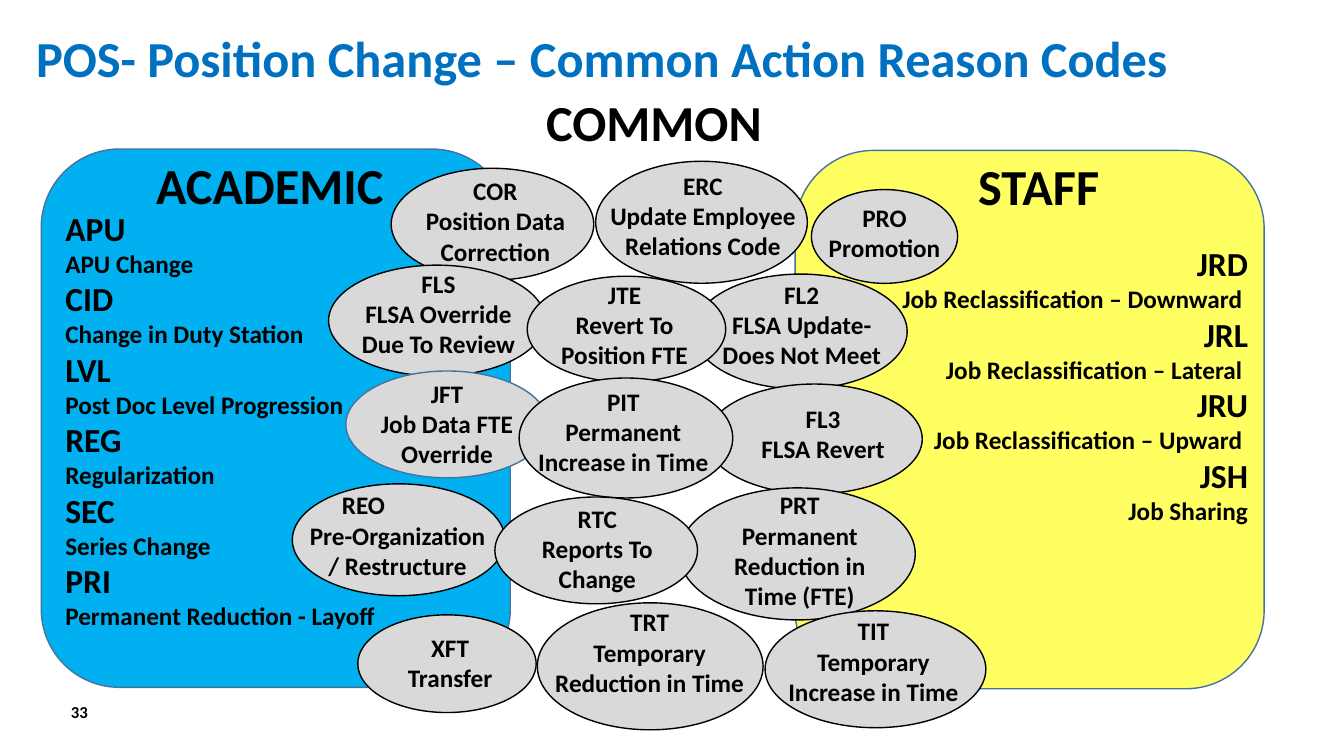
from pptx import Presentation
from pptx.dml.color import RGBColor
from pptx.enum.shapes import MSO_SHAPE
from pptx.enum.text import MSO_ANCHOR, MSO_AUTO_SIZE, PP_ALIGN
from pptx.oxml.ns import qn
from pptx.util import Pt
from lxml import etree

LEFT, CENTER, RIGHT = PP_ALIGN.LEFT, PP_ALIGN.CENTER, PP_ALIGN.RIGHT
BLACK, STEEL, GRAY = "000000", "43739E", "D9D9D9"

deck = Presentation()
deck.slide_width, deck.slide_height = Pt(960), Pt(540)
slide = deck.slides.add_slide(deck.slide_layouts[6])


def add_outline(kind, box, fill, line):
    outline = slide.shapes.add_shape(kind, *map(Pt, box))
    outline.shadow.inherit = False
    outline.fill.solid()
    outline.fill.fore_color.rgb = RGBColor.from_string(fill)
    outline.line.color.rgb = RGBColor.from_string(line)
    outline.line.width = Pt(1)
    return outline


def add_text(box, lines, align=LEFT, color=BLACK):
    label = slide.shapes.add_textbox(*map(Pt, box))
    frame = label.text_frame
    frame.word_wrap = True
    frame.auto_size = MSO_AUTO_SIZE.SHAPE_TO_FIT_TEXT
    for index, (text, size) in enumerate(lines):
        paragraph = frame.add_paragraph() if index else frame.paragraphs[0]
        paragraph.alignment = align
        run = paragraph.add_run()
        run.text = text
        run.font.name = "Calibri"
        run.font.size = Pt(size)
        run.font.bold = True
        run.font.color.rgb = RGBColor.from_string(color)
    return frame


staff_panel = add_outline(MSO_SHAPE.ROUNDED_RECTANGLE, (568, 107.5, 335, 384.5), "FFFF00", STEEL)
yellow = staff_panel.fill._xPr.find(qn("a:solidFill"))[0]
etree.SubElement(yellow, qn("a:alpha")).set("val", "62000")
add_outline(MSO_SHAPE.ROUNDED_RECTANGLE, (29.5, 106.5, 335, 384.5), "00B0F0", STEEL)

add_text((18.7, 15.8, 911, 51), [("POS- Position Change – Common Action Reason Codes", 36)], color="0070C0")
add_text((661.7, 107.3, 160.6, 51), [("STAFF", 36)], CENTER)
add_text((104.4, 106.6, 185, 51), [("ACADEMIC", 36)])
add_text((383, 61.2, 185, 51), [("COMMON", 36)])

academic_codes = [
    ("APU", "APU Change"),
    ("CID", "Change in Duty Station"),
    ("LVL", "Post Doc Level Progression"),
    ("REG", "Regularization"),
    ("SEC", "Series Change"),
    ("PRI", "Permanent Reduction - Layoff"),
]
staff_codes = [
    ("JRD", "Job Reclassification – Downward "),
    ("JRL", "Job Reclassification – Lateral "),
    ("JRU", "Job Reclassification – Upward "),
    ("JSH", "Job Sharing"),
]
for box, codes, align in [
    ((39.6, 144.7, 333.4, 337), academic_codes, LEFT),
    ((564.5, 170, 334, 288.7), staff_codes, RIGHT),
]:
    add_text(box, [line for code, meaning in codes for line in ((code, 24), (meaning, 18))], align)

common_codes = [
    ("COR", "Position Data Correction", (279.4, 120.2, 144.7, 79.9), (293.8, 121.7, 120.2, 75.6)),
    ("ERC", "Update Employee Relations Code", (425.5, 115.2, 151.2, 87.1), (416.9, 118.1, 170.6, 72.7)),
    ("FL2", "FLSA Update- Does Not Meet", (495.4, 195.8, 152.6, 82.1), (501.8, 195.8, 141.8, 72.7)),
    ("FLS", "FLSA Override Due To Review", (234.7, 189.4, 154.8, 79.2), (241.9, 187.9, 142.6, 73.4)),
    ("JTE", "Revert To Position FTE", (376.6, 197.3, 141.8, 75.6), (376.6, 195.8, 139, 72)),
    ("FL3", "FLSA Revert", (504.7, 274.3, 154.1, 78.5), (517, 284.4, 141.8, 51.1)),
    ("JFT", "Job Data FTE Override", (247, 265, 144.7, 76.3), (248.4, 266.4, 141.8, 72.7)),
    ("PIT", "Permanent Increase in Time", (370.8, 270, 152.6, 85.7), (374.4, 272.2, 141.8, 72.7)),
    ("PRO", "Promotion", (579.6, 135.4, 104.4, 67), (560.9, 141.1, 141.8, 51.1)),
    ("PRT", "Permanent Reduction in Time (FTE)", (485.3, 348.5, 168.5, 94.3), (500.4, 346.3, 141.8, 94.3)),
    ("REO", "Pre-Organization / Restructure", (208.8, 345.6, 151.9, 79.9), (213.1, 346.3, 141.8, 72.7)),
    ("RTC", "Reports To Change", (353.5, 355, 144.7, 76.3), (365.8, 355.7, 121.7, 72.7)),
    ("TIT", "Temporary Increase in Time", (546.5, 436.3, 157.7, 83.5), (553, 436.3, 141.8, 72.7)),
    ("TRT", "Temporary Reduction in Time", (383.8, 430.6, 161.3, 90.7), (388.8, 429.8, 150.5, 72.7)),
    ("XFT", "Transfer", (255.6, 439.2, 127.4, 69.8), (250.6, 447.8, 141.8, 51.1)),
]
for code, meaning, oval, box in common_codes:
    add_outline(MSO_SHAPE.OVAL, oval, GRAY, STEEL if code == "JFT" else BLACK)
    wording = add_text(box, [(code, 18), (meaning, 18)], CENTER)
    if code == "REO":
        heading = wording.paragraphs[0]
        heading.alignment = LEFT
        heading._p.get_or_add_pPr().set("marL", str(Pt(24)))

page_number = add_text((10, 492.5, 59.8, 31.7), [("33", 12)], RIGHT)
page_number.auto_size = MSO_AUTO_SIZE.NONE
page_number.vertical_anchor = MSO_ANCHOR.MIDDLE

deck.save("out.pptx")
